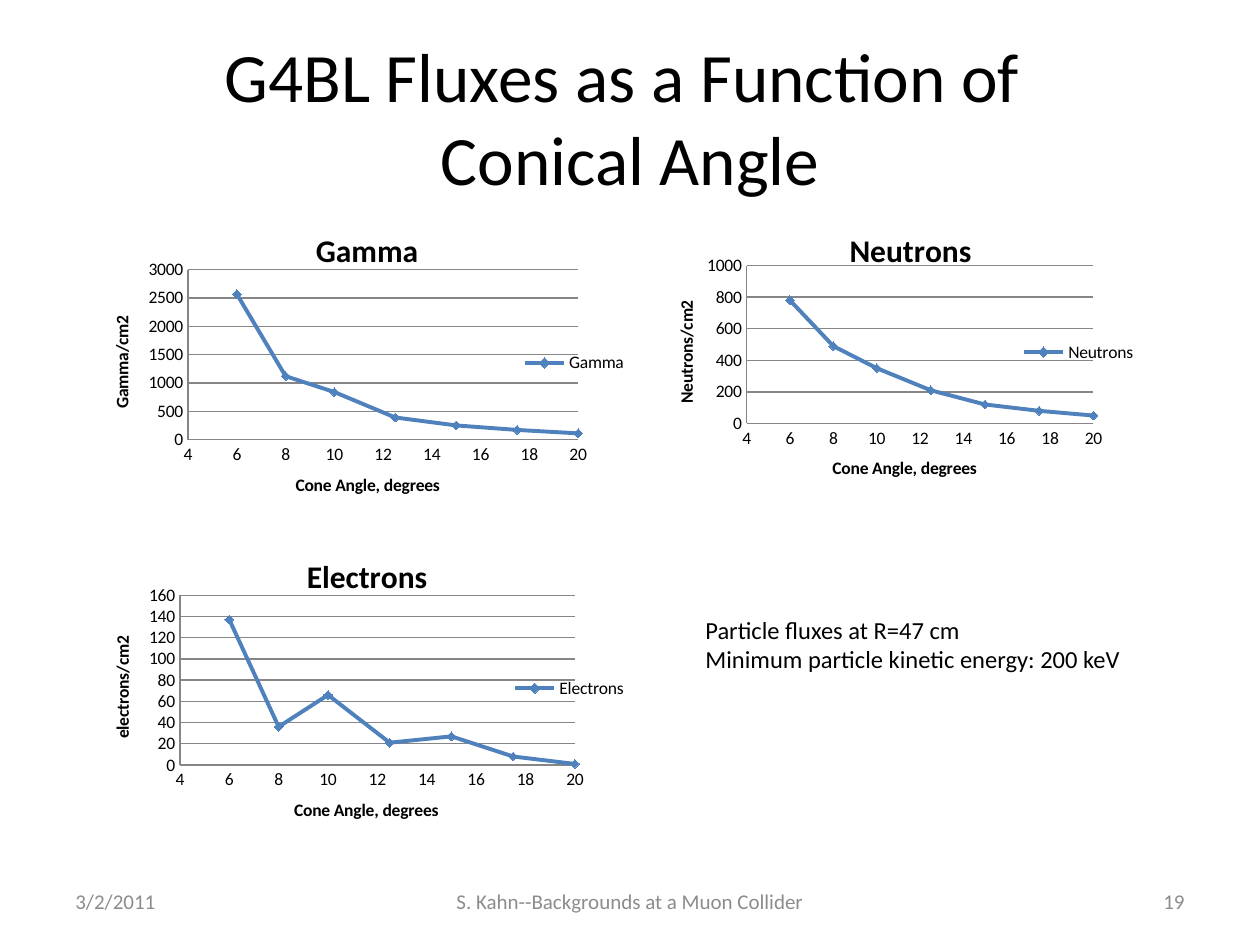
from dataclasses import dataclass

from lxml import etree
from pptx import Presentation
from pptx.chart.data import XyChartData
from pptx.dml.color import RGBColor
from pptx.enum.chart import XL_CHART_TYPE, XL_LEGEND_POSITION, XL_MARKER_STYLE, XL_TICK_MARK
from pptx.enum.text import MSO_ANCHOR, PP_ALIGN
from pptx.oxml.ns import qn
from pptx.util import Cm, Pt


@dataclass(frozen=True)
class Theme:
    font: str = "Calibri"
    text: RGBColor = RGBColor(0, 0, 0)
    muted: RGBColor = RGBColor(0x8C, 0x8C, 0x8C)
    grid: RGBColor = RGBColor(0x86, 0x86, 0x86)
    series: RGBColor = RGBColor(0x4F, 0x81, 0xBD)
    title_size: float = 39.6
    note_size: float = 14
    footer_size: float = 12
    chart_title_size: float = 18
    chart_size: float = 10


THEME = Theme()
ANGLES = (6, 8, 10, 12.5, 15, 17.5, 20)
PLOT_TOP, PLOT_HEIGHT = 0.195, 0.557

# Box (cm), name, axis title, axis maximum, axis step, plot left and width, fluxes
CHARTS = (
    ((1.9, 4.24, 11, 6.15), "Gamma", "Gamma/cm2", 3000, 500, (0.172, 0.715),
     (2570, 1120, 840, 390, 250, 170, 110)),
    ((13.54, 4.24, 9.63, 5.72), "Neutrons", "Neutrons/cm2", 1000, 200, (0.157, 0.726),
     (780, 490, 350, 210, 120, 80, 50)),
    ((1.9, 10.8, 11, 6.15), "Electrons", "electrons/cm2", 160, 20, (0.157, 0.724),
     (137, 36, 66, 21, 27, 8, 1)),
)


def set_font(font, size, color=THEME.text, bold=False):
    font.name = THEME.font
    font.size = Pt(size)
    font.bold = bold
    font.color.rgb = color


def fill_title(slide, box):
    title = slide.shapes.title
    title.left, title.top, title.width, title.height = map(Cm, box)
    frame = title.text_frame
    frame.text = "G4BL Fluxes as a Function of \vConical Angle"
    frame.vertical_anchor = MSO_ANCHOR.MIDDLE
    frame.paragraphs[0].alignment = PP_ALIGN.CENTER
    set_font(frame.paragraphs[0].font, THEME.title_size)


def add_text(slide, box, text, size, color=THEME.text,
             align=PP_ALIGN.LEFT, anchor=MSO_ANCHOR.TOP):
    frame = slide.shapes.add_textbox(*map(Cm, box)).text_frame
    frame.word_wrap = True
    frame.vertical_anchor = anchor
    frame.text = text
    for paragraph in frame.paragraphs:
        paragraph.alignment = align
        set_font(paragraph.font, size, color)


def add_heading(owner, text, size):
    """Give a chart or an axis its bold title."""
    frame = (owner.chart_title if hasattr(owner, "chart_title") else owner.axis_title).text_frame
    frame.text = text
    set_font(frame.paragraphs[0].font, size, bold=True)


def format_axis(axis, title, minimum, maximum, step):
    axis.minimum_scale, axis.maximum_scale, axis.major_unit = minimum, maximum, step
    axis.major_tick_mark = axis.minor_tick_mark = XL_TICK_MARK.NONE
    axis.format.line.color.rgb = THEME.grid
    axis.format.line.width = Pt(0.75)
    add_heading(axis, title, THEME.chart_size)


def place_plot(chart, left, width):
    """Fix the inner plot area, in fractions of the chart."""
    plot_area = chart._chartSpace.chart.plotArea
    for old in plot_area.findall(qn("c:layout")):
        plot_area.remove(old)
    layout = etree.Element(qn("c:layout"))
    manual = etree.SubElement(layout, qn("c:manualLayout"))
    settings = (("layoutTarget", "inner"), ("xMode", "edge"), ("yMode", "edge"),
                ("x", left), ("y", PLOT_TOP), ("w", width), ("h", PLOT_HEIGHT))
    for tag, value in settings:
        etree.SubElement(manual, qn(f"c:{tag}")).set("val", str(value))
    plot_area.insert(0, layout)


def add_flux_chart(slide, box, name, unit, maximum, step, plot, fluxes):
    data = XyChartData()
    points = data.add_series(name)
    for angle, flux in zip(ANGLES, fluxes):
        points.add_data_point(angle, flux)
    chart = slide.shapes.add_chart(
        XL_CHART_TYPE.XY_SCATTER_SMOOTH, *map(Cm, box), data).chart
    set_font(chart.font, THEME.chart_size)
    add_heading(chart, name, THEME.chart_title_size)

    # Axes and grid
    format_axis(chart.category_axis, "Cone Angle, degrees", 4, 20, 2)
    format_axis(chart.value_axis, unit, 0, maximum, step)
    chart.category_axis.has_major_gridlines = False
    chart.value_axis.has_major_gridlines = True
    grid_line = chart.value_axis.major_gridlines.format.line
    grid_line.color.rgb = THEME.grid
    grid_line.width = Pt(0.75)

    # Legend and plot area
    chart.has_legend = True
    chart.legend.position = XL_LEGEND_POSITION.RIGHT
    chart.legend.include_in_layout = False
    place_plot(chart, *plot)

    # Curve
    chart.plots[0].vary_by_categories = False
    series = chart.plots[0].series[0]
    series.smooth = True
    series.format.line.color.rgb = THEME.series
    series.format.line.width = Pt(2.25)
    series.marker.style = XL_MARKER_STYLE.DIAMOND
    series.marker.size = 5
    series.marker.format.fill.solid()
    series.marker.format.fill.fore_color.rgb = THEME.series
    series.marker.format.line.color.rgb = THEME.series


def add_footer(slide, box):
    left, top, width, height = box
    side, middle = 5.92, 8.05
    parts = (
        (0, side, "3/2/2011", PP_ALIGN.LEFT),
        ((width - middle) / 2, middle, "S. Kahn--Backgrounds at a Muon Collider", PP_ALIGN.CENTER),
        (width - side, side, "19", PP_ALIGN.RIGHT),
    )
    for offset, part_width, text, align in parts:
        add_text(slide, (left + offset, top, part_width, height), text,
                 THEME.footer_size, THEME.muted, align, MSO_ANCHOR.MIDDLE)


def main():
    presentation = Presentation()
    presentation.slide_width, presentation.slide_height = Cm(25.4), Cm(19.05)
    slide = presentation.slides.add_slide(presentation.slide_layouts[5])
    fill_title(slide, (1.27, 0.76, 22.86, 3.18))
    for chart in CHARTS:
        add_flux_chart(slide, *chart)
    add_text(slide, (13.97, 12.27, 9.32, 1.45),
             "Particle fluxes at R=47 cm\nMinimum particle kinetic energy: 200 keV",
             THEME.note_size)
    add_footer(slide, (1.27, 17.65, 22.86, 1.02))
    presentation.save("out.pptx")


if __name__ == "__main__":
    main()
